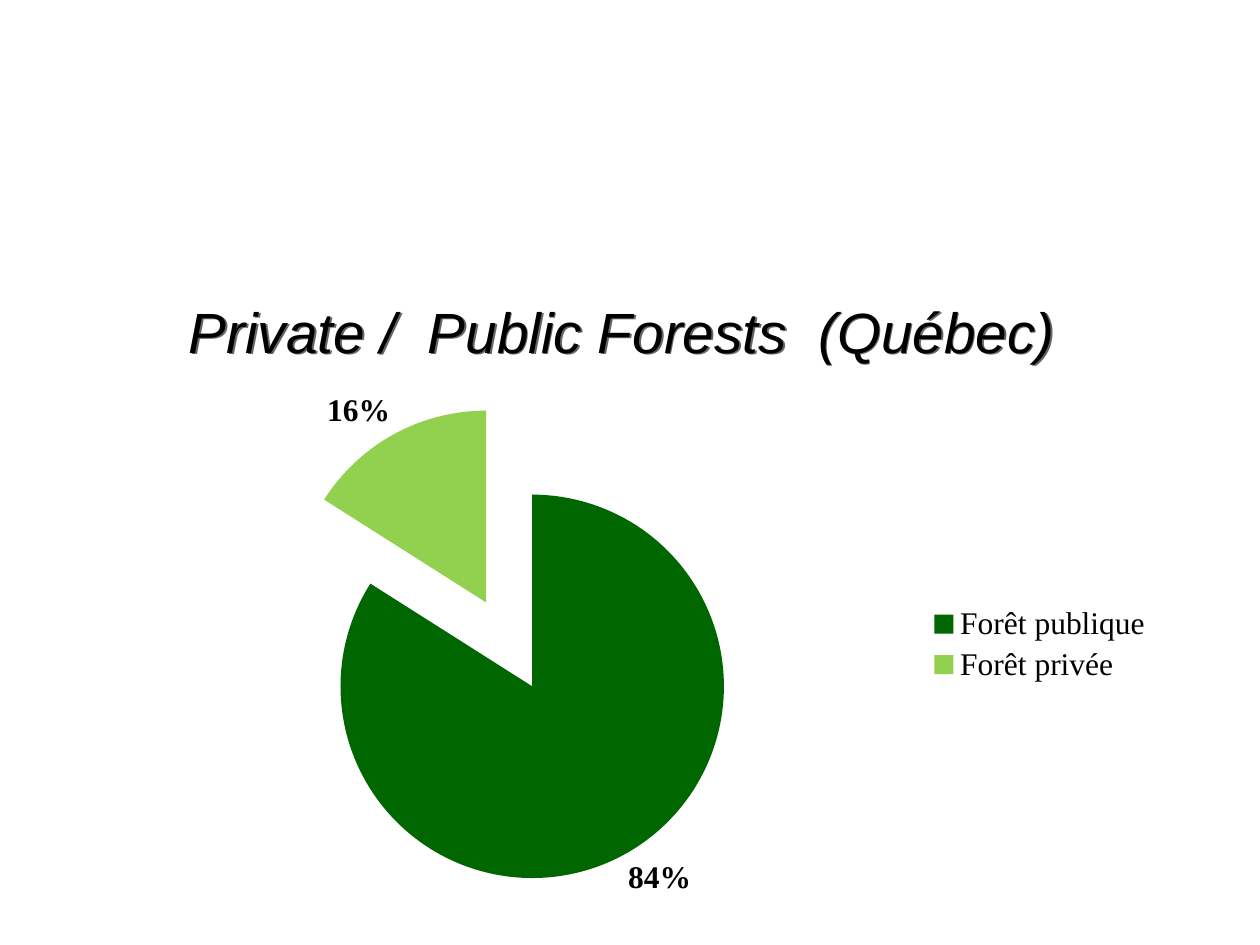
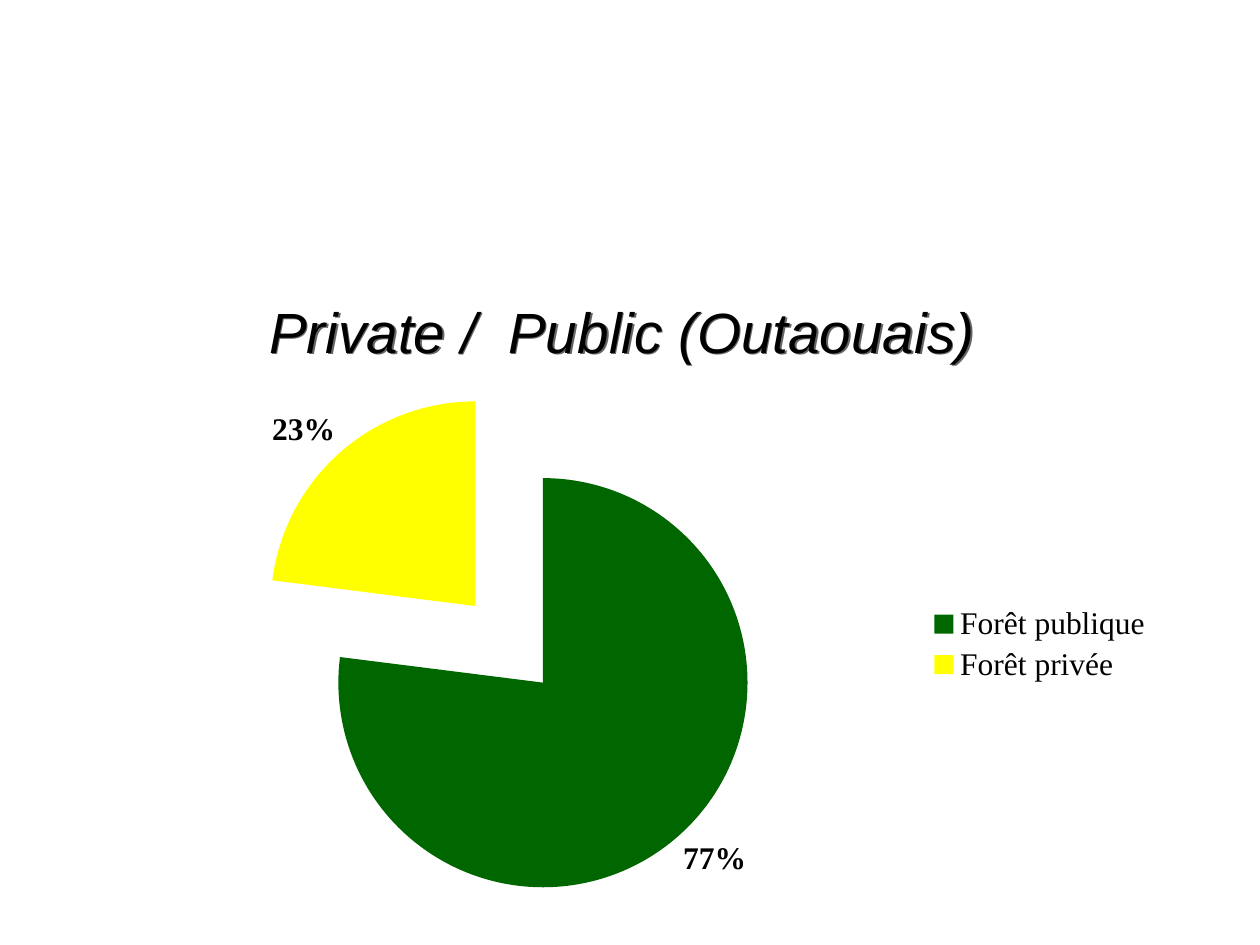
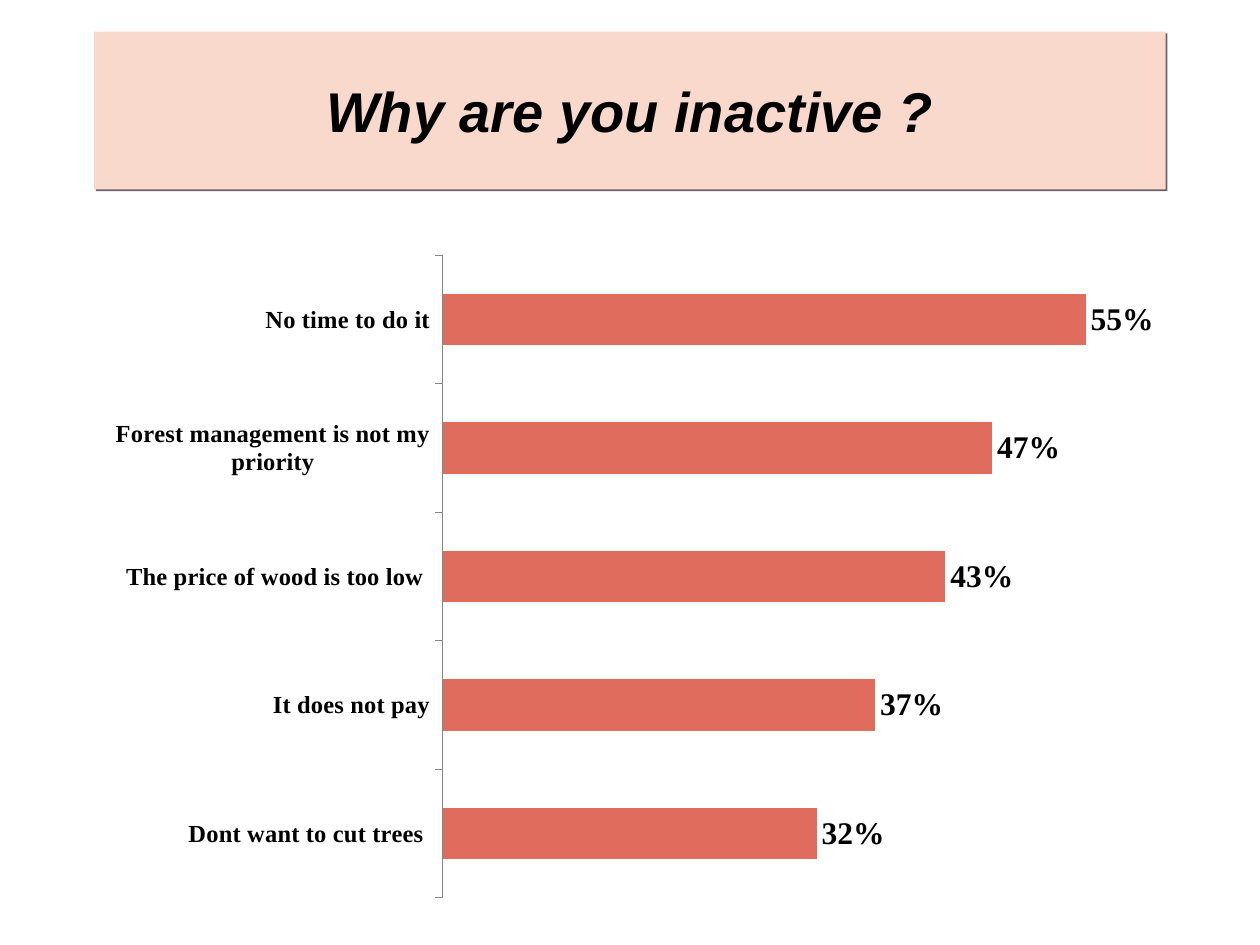
from lxml.etree import SubElement
from pptx import Presentation
from pptx.chart.data import CategoryChartData
from pptx.dml.color import RGBColor
from pptx.enum.chart import XL_CHART_TYPE as ChartType
from pptx.enum.chart import XL_LABEL_POSITION as LabelPosition
from pptx.enum.chart import XL_LEGEND_POSITION as LegendPosition
from pptx.enum.chart import XL_TICK_LABEL_POSITION as TickLabels
from pptx.enum.chart import XL_TICK_MARK as TickMark
from pptx.enum.shapes import MSO_SHAPE as Preset
from pptx.enum.text import MSO_ANCHOR as Anchor
from pptx.enum.text import PP_ALIGN as Align
from pptx.oxml.ns import qn
from pptx.util import Cm, Pt

BLACK = RGBColor(0x00, 0x00, 0x00)
FOREST_GREEN = RGBColor(0x00, 0x66, 0x00)
LIGHT_GREEN = RGBColor(0x92, 0xD0, 0x50)
YELLOW = RGBColor(0xFF, 0xFF, 0x00)
CORAL = RGBColor(0xDF, 0x6C, 0x5D)
PINK = RGBColor(0xFA, 0xD9, 0xCD)
SHADOW_GREY = RGBColor(0x69, 0x64, 0x64)
AXIS_GREY = RGBColor(0x86, 0x86, 0x86)

REASONS = {
    "Dont want to cut trees ": 0.32,
    "It does not pay": 0.37,
    "The price of wood is too low ": 0.43,
    "Forest management is not my priority": 0.47,
    "No time to do it": 0.55,
}


class ForestDeck:
    """Holds the shared style and the slide being filled."""

    title_font = "Arial"
    chart_font = "Times New Roman"
    left, width = Cm(1.9), Cm(21.6)
    title_height = Cm(3.18)

    def __init__(self):
        self.deck = Presentation()
        self.deck.slide_width, self.deck.slide_height = Cm(25.4), Cm(19.05)
        self.page = None

    def new_page(self):
        self.page = self.deck.slides.add_slide(self.deck.slide_layouts[6])

    def add_shadow(self, box):
        box.shadow.inherit = False
        effects = box._element.spPr.find(qn("a:effectLst"))
        shadow = SubElement(effects, qn("a:outerShdw"), dist=str(Pt(1.4)),
                            dir="2700000", algn="ctr", rotWithShape="0")
        SubElement(shadow, qn("a:srgbClr"), val=str(SHADOW_GREY))

    def title(self, text, top, size, anchor, band=None, bold=False):
        box = self.page.shapes.add_shape(
            Preset.RECTANGLE, self.left, top, self.width, self.title_height)
        if band is None:
            box.fill.background()
        else:
            box.fill.solid()
            box.fill.fore_color.rgb = band
        box.line.fill.background()
        self.add_shadow(box)
        frame = box.text_frame
        frame.word_wrap = True
        frame.vertical_anchor = anchor
        frame.margin_bottom = Cm(0.28) if anchor == Anchor.BOTTOM else frame.margin_top
        para = frame.paragraphs[0]
        para.alignment = Align.CENTER
        span = para.add_run()
        span.text = text
        span.font.name, span.font.size = self.title_font, Pt(size)
        span.font.bold, span.font.italic = bold, True
        span.font.color.rgb = BLACK

    def chart(self, kind, values, top, height):
        data = CategoryChartData(number_format="0%")
        data.categories = list(values)
        data.add_series("Series 1", list(values.values()))
        chart = self.page.shapes.add_chart(
            kind, self.left, top, self.width, height, data).chart
        chart.has_title = False
        chart.has_legend = False
        chart.font.name, chart.font.size = self.chart_font, Pt(18)
        chart.font.color.rgb = BLACK
        plot = chart.plots[0]
        plot.vary_by_categories = kind == ChartType.PIE
        plot.has_data_labels = True
        labels = plot.data_labels
        labels.show_value = True
        labels.show_percentage = False
        labels.number_format, labels.number_format_is_linked = "0%", False
        labels.position = LabelPosition.OUTSIDE_END
        labels.font.name, labels.font.size = self.chart_font, Pt(18)
        labels.font.bold = True
        labels.font.color.rgb = BLACK
        return chart

    def pie(self, public_share, private_share, private_color):
        values = {"Forêt publique": public_share, "Forêt privée": private_share}
        chart = self.chart(ChartType.PIE, values, Cm(7.29), Cm(11.4))
        chart.has_legend = True
        chart.legend.position = LegendPosition.RIGHT
        chart.legend.include_in_layout = False
        series = chart.plots[0].series[0]
        # Both slices move out from the centre
        name = series._element.find(qn("c:tx"))
        explosion = SubElement(series._element, qn("c:explosion"), val="25")
        name.addnext(explosion)
        for index, color in enumerate((FOREST_GREEN, private_color)):
            fill = series.points[index].format.fill
            fill.solid()
            fill.fore_color.rgb = color

    def bars(self, values, color):
        chart = self.chart(ChartType.BAR_CLUSTERED, values, Cm(4.88), Cm(13.49))
        plot = chart.plots[0]
        plot.gap_width = 150
        fill = plot.series[0].format.fill
        fill.solid()
        fill.fore_color.rgb = color
        # Category axis with outward ticks, hidden value axis
        reasons = chart.category_axis
        reasons.major_tick_mark = TickMark.OUTSIDE
        reasons.tick_label_position = TickLabels.NEXT_TO_AXIS
        reasons.tick_labels.font.size = Pt(14)
        reasons.tick_labels.font.bold = True
        reasons.format.line.color.rgb = AXIS_GREY
        reasons.format.line.width = Pt(0.75)
        shares = chart.value_axis
        shares.has_major_gridlines = False
        shares.minimum_scale, shares.maximum_scale = 0, 0.6
        shares.visible = False


def main():
    forest = ForestDeck()

    # Ownership shares
    for text, public, private, color in (
        ("Private /  Public Forests  (Québec) ", 0.84, 0.16, LIGHT_GREEN),
        ("Private /  Public (Outaouais) ", 0.77, 0.23, YELLOW),
    ):
        forest.new_page()
        forest.title(text, Cm(4.45), 32.4, Anchor.BOTTOM)
        forest.pie(public, private, color)

    # Reasons for inactivity
    forest.new_page()
    forest.title("Why are you inactive ?", Cm(0.64), 32, Anchor.MIDDLE, PINK, bold=True)
    forest.bars(REASONS, CORAL)

    forest.deck.save("out.pptx")


if __name__ == "__main__":
    main()
